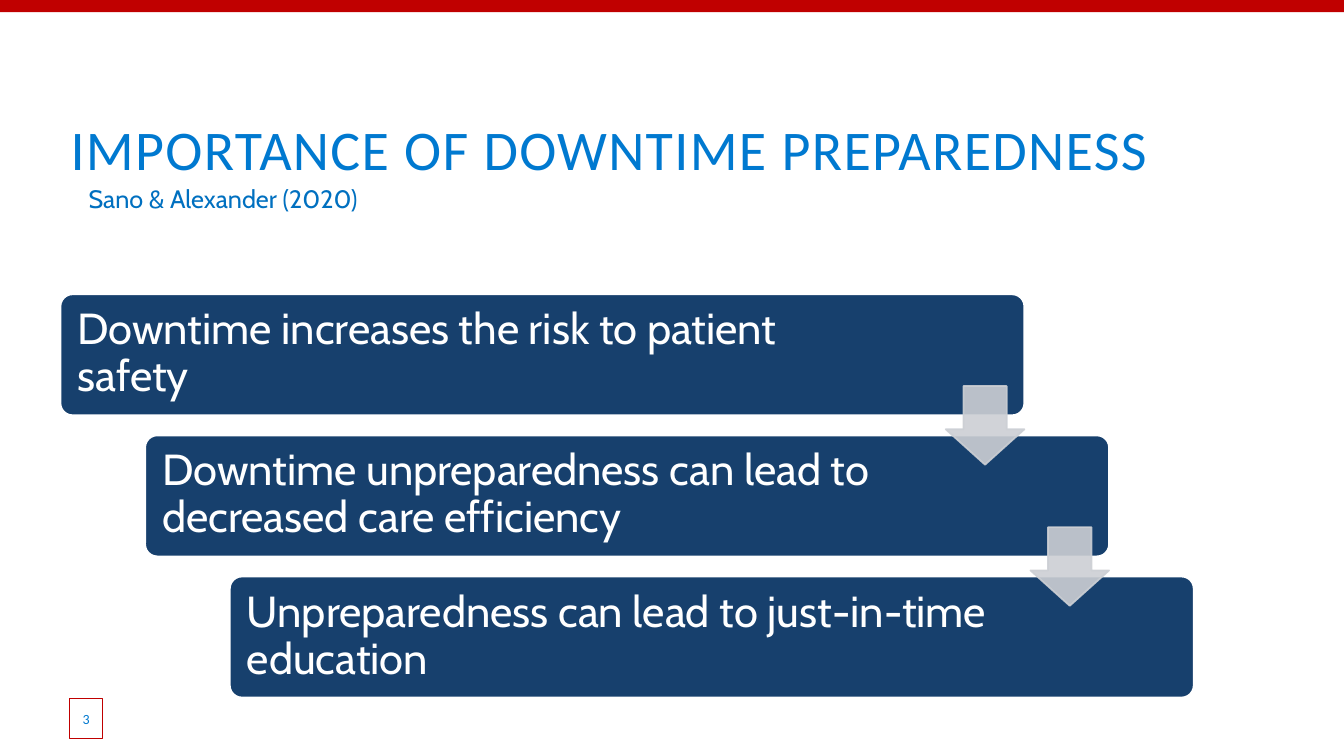
from lxml import etree
from pptx import Presentation
from pptx.dml.color import RGBColor
from pptx.enum.shapes import MSO_SHAPE
from pptx.enum.text import MSO_ANCHOR, PP_ALIGN
from pptx.oxml.ns import qn
from pptx.util import Inches, Pt

RECTANGLE = MSO_SHAPE.RECTANGLE
ROUNDED = MSO_SHAPE.ROUNDED_RECTANGLE
DOWN_ARROW = MSO_SHAPE.DOWN_ARROW
TOP, MIDDLE = MSO_ANCHOR.TOP, MSO_ANCHOR.MIDDLE
LEFT, CENTER = PP_ALIGN.LEFT, PP_ALIGN.CENTER

RED = RGBColor(0xC0, 0x00, 0x00)
WHITE = RGBColor(0xFF, 0xFF, 0xFF)
NAVY = RGBColor(0x17, 0x40, 0x6D)
GRAY = RGBColor(0xCC, 0xCF, 0xD4)
TITLE_BLUE = RGBColor(0x00, 0x79, 0xD0)
CITATION_BLUE = RGBColor(0x00, 0x70, 0xC0)


class SlideBuilder:
    heading_font = "Calibri"
    body_font = "Cabin"

    def __init__(self, presentation):
        self.slide = presentation.slides.add_slide(presentation.slide_layouts[5])

    def fill_text(self, shape, text, font, size, color, align=LEFT, anchor=TOP,
                  insets=(0.1, 0.05), line_spacing=1.0):
        frame = shape.text_frame
        frame.text = text
        frame.word_wrap = True
        frame.vertical_anchor = anchor
        frame.margin_left = frame.margin_right = Inches(insets[0])
        frame.margin_top = frame.margin_bottom = Inches(insets[1])
        paragraph = frame.paragraphs[0]
        paragraph.alignment = align
        paragraph.line_spacing = line_spacing
        run = paragraph.runs[0]
        run.font.name = font
        run.font.size = Pt(size)
        run.font.color.rgb = color
        return run

    def set_alpha(self, properties, percent):
        color = properties.find(qn("a:solidFill"))[0]
        etree.SubElement(color, qn("a:alpha"), val=str(percent * 1000))

    def title(self, box, text):
        shape = self.slide.shapes.title
        shape.left, shape.top, shape.width, shape.height = map(Inches, box)
        run = self.fill_text(shape, text, self.heading_font, 40, TITLE_BLUE, anchor=MIDDLE)
        run.font._element.set("spc", "100")

    def shape(self, kind, box, fill, line=None, line_width=1.25, adjustments=(),
              fill_alpha=None, line_alpha=None):
        shape = self.slide.shapes.add_shape(kind, *map(Inches, box))
        shape.shadow.inherit = False
        for index, value in enumerate(adjustments):
            shape.adjustments[index] = value
        shape.fill.solid()
        shape.fill.fore_color.rgb = fill
        if fill_alpha:
            self.set_alpha(shape._element.spPr, fill_alpha)
        if line is None:
            shape.line.fill.background()
        else:
            shape.line.color.rgb = line
            shape.line.width = Pt(line_width)
            if line_alpha:
                self.set_alpha(shape._element.spPr.find(qn("a:ln")), line_alpha)
        return shape

    def text(self, box, text, size, color, **style):
        shape = self.slide.shapes.add_textbox(*map(Inches, box))
        self.fill_text(shape, text, self.body_font, size, color, **style)

    def step(self, left, top, text, text_width):
        self.shape(ROUNDED, (left, top, 9.56, 1.2), NAVY, WHITE, adjustments=[0.1])
        self.text((left + 0.04, top + 0.03, text_width, 1.13), text, 31, WHITE,
                  anchor=MIDDLE, insets=(0.13, 0.13), line_spacing=0.9)

    def arrow(self, left, top):
        self.shape(DOWN_ARROW, (left, top, 0.78, 0.78), GRAY, GRAY,
                   adjustments=[0.55, 0.45], fill_alpha=90, line_alpha=90)

    def page_number(self, box, number):
        shape = self.shape(RECTANGLE, box, WHITE, RED, 0.75, fill_alpha=82)
        self.fill_text(shape, number, self.heading_font, 10, TITLE_BLUE,
                       align=CENTER, anchor=MIDDLE, insets=(0, 0.05))
        shape.text_frame.paragraphs[0].space_after = Pt(6)


def main():
    presentation = Presentation()
    presentation.slide_width = Inches(13.33)
    presentation.slide_height = Inches(7.5)
    builder = SlideBuilder(presentation)

    # Top band, title and page number
    builder.shape(RECTANGLE, (0, 0, 13.33, 0.12), RED)
    builder.title((0.6, 1.08, 11.82, 0.77), "IMPORTANCE OF DOWNTIME PREPAREDNESS")
    builder.page_number((0.69, 6.93, 0.33, 0.4), "3")

    # Staircase of steps, joined by arrows
    steps = [
        ("Downtime increases the risk to patient safety", 8.27),
        ("Downtime unpreparedness can lead to decreased care efficiency", 7.87),
        ("Unpreparedness can lead to just-in-time education", 7.87),
    ]
    step_right, step_down = 0.84, 1.4
    for index, (text, text_width) in enumerate(steps):
        builder.step(0.6 + index * step_right, 2.92 + index * step_down, text, text_width)
    for index in range(len(steps) - 1):
        builder.arrow(9.38 + index * step_right, 3.83 + index * step_down)

    # Citation under the title
    builder.text((0.78, 1.77, 5.17, 0.4), "Sano & Alexander (2020)", 18, CITATION_BLUE)

    presentation.save("out.pptx")


if __name__ == "__main__":
    main()
